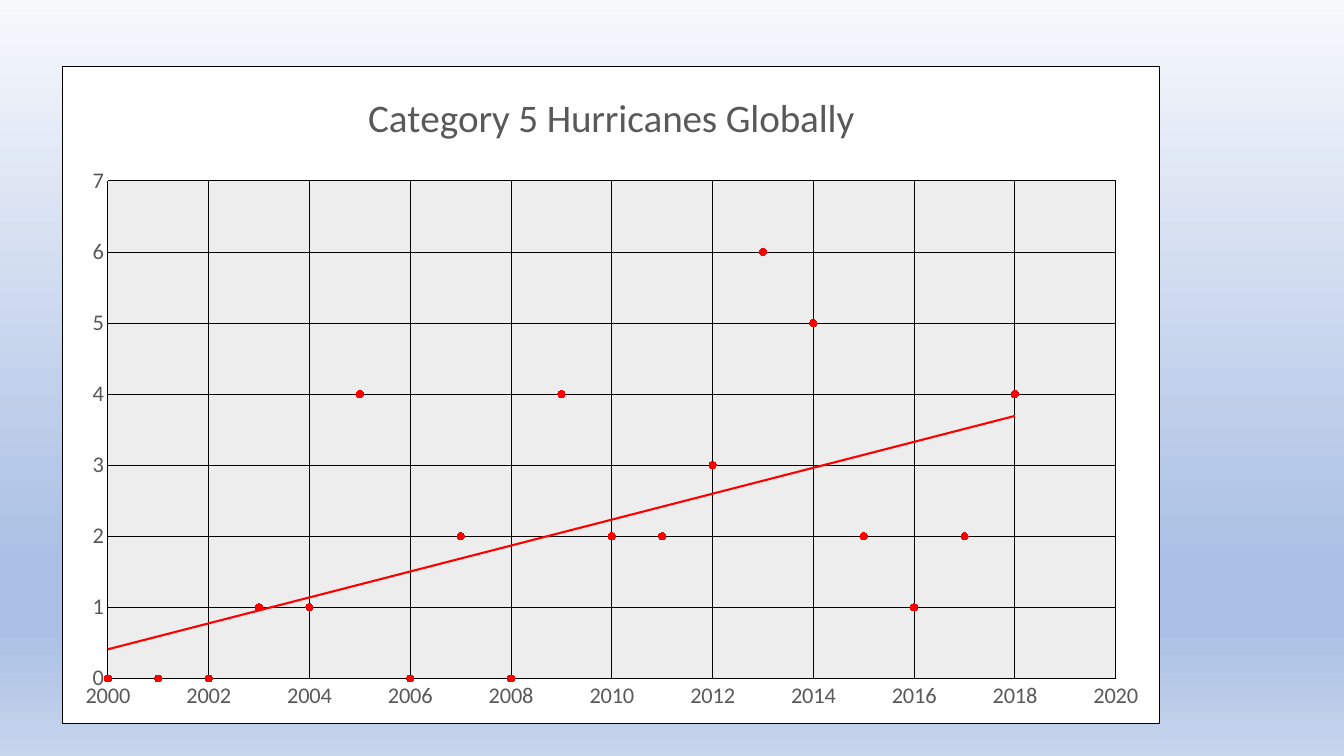
from pptx import Presentation
from pptx.chart.data import XyChartData
from pptx.dml.color import RGBColor
from pptx.enum.chart import XL_CHART_TYPE, XL_MARKER_STYLE, XL_TICK_MARK
from pptx.oxml import parse_xml
from pptx.oxml.ns import nsdecls, qn
from pptx.util import Pt

TITLE = "Category 5 Hurricanes Globally"
FIRST_YEAR = 2000
HURRICANES = [0, 0, 0, 1, 1, 4, 0, 2, 0, 4, 2, 2, 3, 6, 5, 2, 1, 2, 4]
YEAR_SCALE = (2000, 2020, 2)
COUNT_SCALE = (0, 7, 1)
COLORS = {
    "line": "000000",
    "text": "595959",
    "data": "FF0000",
    "frame": "FFFFFF",
    "plot": "EDEDED",
}
BACKGROUND_STOPS = [(0, "F6F8FC"), (74, "ABC0E4"), (83, "ABC0E4"), (100, "C7D5ED")]
FONT = "Calibri"
CHART_BOX = (44.6, 46.8, 784.1, 470.2)
PLOT_BOX = {"x": 0.041, "y": 0.175, "w": 0.919, "h": 0.757}


def color(name):
    return RGBColor.from_string(COLORS[name])


def solid(name):
    return f'<a:solidFill><a:srgbClr val="{COLORS[name]}"/></a:solidFill>'


def line(name, width):
    return f'<a:ln w="{Pt(width)}">{solid(name)}</a:ln>'


def chart_xml(tag, content):
    return parse_xml(f'<c:{tag} {nsdecls("c", "a")}>{content}</c:{tag}>')


def style_font(font, size, name):
    font.name = FONT
    font.size = Pt(size)
    font.color.rgb = color(name)


def style_line(target, name, width):
    target.color.rgb = color(name)
    target.width = Pt(width)


def paint_background(page):
    page.background.fill.solid()
    stops = "".join(
        f'<a:gs pos="{place * 1000}"><a:srgbClr val="{shade}"/></a:gs>'
        for place, shade in BACKGROUND_STOPS
    )
    gradient = parse_xml(
        f'<a:gradFill {nsdecls("a")} rotWithShape="1"><a:gsLst>{stops}</a:gsLst>'
        '<a:lin ang="5400000" scaled="0"/></a:gradFill>'
    )
    flat = page.element.find(".//" + qn("p:bgPr")).find(qn("a:solidFill"))
    flat.getparent().replace(flat, gradient)


def style_axis(axis, scale, width):
    axis.minimum_scale, axis.maximum_scale, axis.major_unit = scale
    axis.major_tick_mark = axis.minor_tick_mark = XL_TICK_MARK.NONE
    axis.has_major_gridlines = True
    style_line(axis.major_gridlines.format.line, "line", 0.75)
    style_line(axis.format.line, "line", width)
    style_font(axis.tick_labels.font, 16, "text")
    axis.tick_labels.number_format = "General"
    axis.tick_labels.number_format_is_linked = False


def style_series(series):
    series.format.line.fill.background()
    series.marker.style = XL_MARKER_STYLE.CIRCLE
    series.marker.size = 5
    series.marker.format.fill.solid()
    series.marker.format.fill.fore_color.rgb = color("data")
    style_line(series.marker.format.line, "data", 0.75)
    trend = chart_xml(
        "trendline",
        f'<c:spPr>{line("data", 1.5)}</c:spPr><c:trendlineType val="linear"/>'
        '<c:dispRSqr val="0"/><c:dispEq val="0"/>',
    )
    series._element.find(qn("c:xVal")).addprevious(trend)


def style_areas(chart):
    body = chart._chartSpace.find(qn("c:chart"))
    body.addnext(chart_xml("spPr", solid("frame") + line("line", 0.75)))
    plot_area = body.find(qn("c:plotArea"))
    for layout in plot_area.findall(qn("c:layout")):
        plot_area.remove(layout)
    modes = '<c:layoutTarget val="inner"/><c:xMode val="edge"/><c:yMode val="edge"/>'
    sizes = "".join(f'<c:{side} val="{part}"/>' for side, part in PLOT_BOX.items())
    layout = chart_xml("layout", f"<c:manualLayout>{modes}{sizes}</c:manualLayout>")
    plot_area.insert(0, layout)
    plot_area.append(chart_xml("spPr", solid("plot")))


def add_hurricane_chart(page):
    data = XyChartData()
    points = data.add_series("Series 1")
    for year, count in enumerate(HURRICANES, FIRST_YEAR):
        points.add_data_point(year, count)
    chart = page.shapes.add_chart(
        XL_CHART_TYPE.XY_SCATTER, *map(Pt, CHART_BOX), data
    ).chart
    style_font(chart.font, 10, "line")
    chart.has_legend = False
    chart.has_title = True
    chart.chart_title.include_in_layout = False
    heading = chart.chart_title.text_frame
    heading.text = TITLE
    style_font(heading.paragraphs[0].font, 28, "text")
    heading.paragraphs[0].font.bold = False
    chart.plots[0].vary_by_categories = False
    series = chart.plots[0].series[0]
    series.smooth = False
    style_series(series)
    style_axis(chart.category_axis, YEAR_SCALE, 1.25)
    style_axis(chart.value_axis, COUNT_SCALE, 0.75)
    style_areas(chart)


def main():
    deck = Presentation()
    deck.slide_width, deck.slide_height = Pt(960), Pt(540)
    page = deck.slides.add_slide(deck.slide_layouts[6])
    paint_background(page)
    add_hurricane_chart(page)
    deck.save("out.pptx")


if __name__ == "__main__":
    main()
